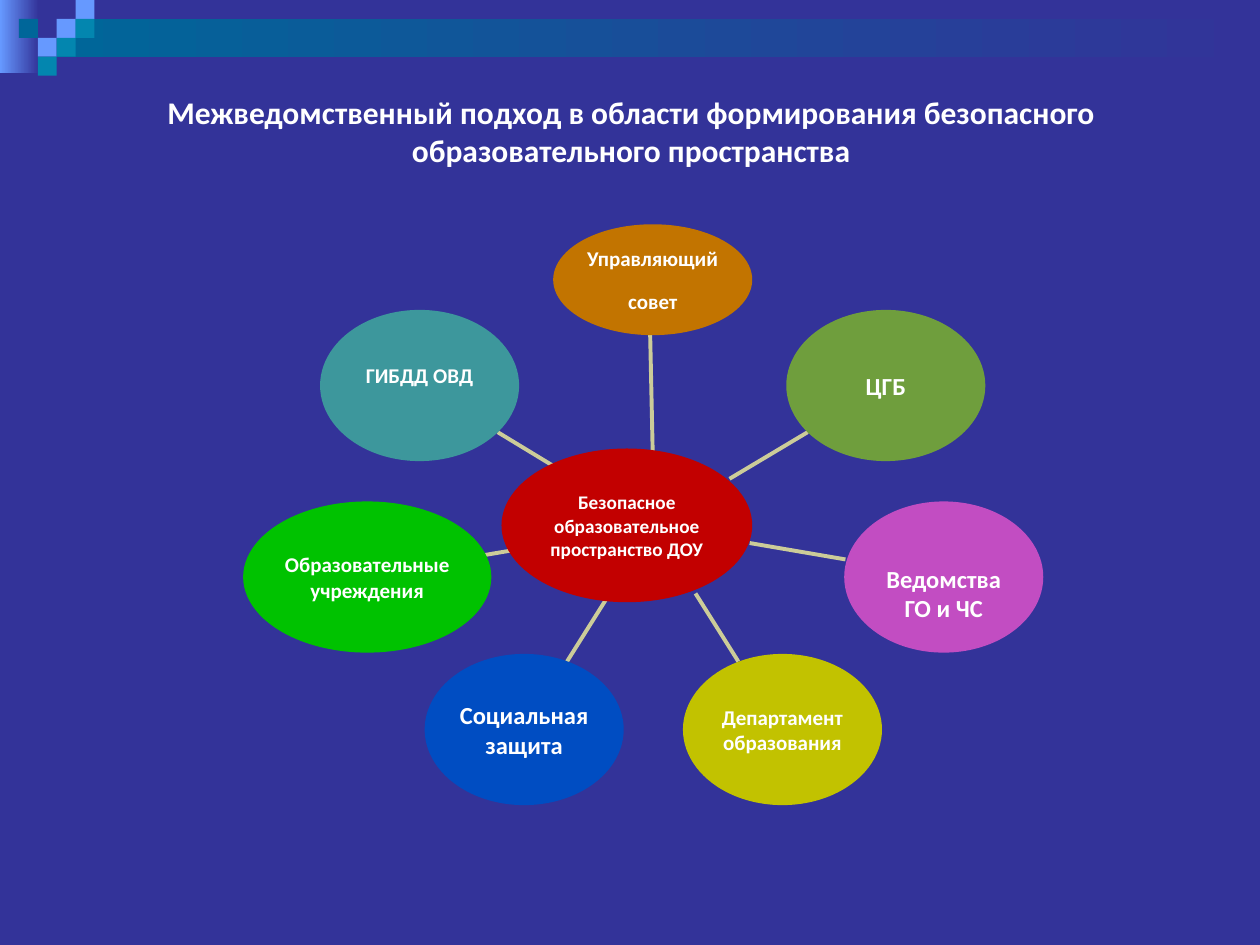
from dataclasses import dataclass
from typing import Any

from lxml import etree
from pptx import Presentation
from pptx import util as u
from pptx.dml.color import RGBColor
from pptx.enum import shapes, text
from pptx.oxml import ns


@dataclass(frozen=True)
class Theme:
    font: str = "Calibri"
    background: str = "333399"
    text: str = "FFFFFF"
    line: str = "CCCC99"
    light: str = "6699FF"
    teal: str = "0386AF"
    deep: str = "006699"
    title_size: int = 18
    large: int = 14
    normal: int = 12
    small: int = 11
    line_width: float = 2.25


@dataclass(frozen=True)
class Box:
    left: float
    top: float
    width: float
    height: float

    def lengths(self) -> list[u.Length]:
        return [u.Inches(n) for n in (self.left, self.top, self.width, self.height)]


@dataclass(frozen=True)
class Node:
    lines: tuple[str, ...]
    box: Box
    colour: str
    size: int
    shift: float = 0
    gap: int = 0


@dataclass(frozen=True)
class Spoke:
    start: tuple[float, float]
    end: tuple[float, float]


THEME = Theme()
WIDTH, HEIGHT = 1.58, 1.2
SQUARE = 0.15

BANDS = (
    (Box(0, 0, 0.31, 0.58), THEME.light),
    (Box(0.45, 0.15, 9.55, 0.3), THEME.deep),
)
SQUARES = (
    (3, 1, THEME.light),
    (4, 0, THEME.light),
    (4, 1, THEME.teal),
    (2, 2, THEME.light),
    (1, 1, THEME.deep),
    (3, 2, THEME.teal),
    (2, 3, THEME.teal),
)
SPOKES = (
    Spoke((4.56, 3.8), (3.95, 3.43)),
    Spoke((4.41, 4.31), (3.64, 4.44)),
    Spoke((4.84, 4.71), (4.5, 5.25)),
    Spoke((5.52, 4.71), (5.86, 5.25)),
    Spoke((5.95, 4.31), (6.71, 4.44)),
    Spoke((5.79, 3.8), (6.41, 3.43)),
    Spoke((5.18, 3.58), (5.16, 2.65)),
)
NODES = (
    Node(("ГИБДД ОВД",), Box(2.54, 2.46, WIDTH, HEIGHT), "3D979C", THEME.normal, -0.08),
    Node(("Образовательные учреждения",), Box(1.93, 3.98, 1.97, HEIGHT), "00C200", THEME.normal),
    Node(("Социальная", "защита"), Box(3.37, 5.19, WIDTH, HEIGHT), "004DC2", THEME.large),
    Node(("Департамент образования",), Box(5.42, 5.19, WIDTH, HEIGHT), "C2C200", THEME.normal),
    Node(("Ведомства", "ГО и ЧС"), Box(6.7, 3.98, WIDTH, HEIGHT), "C24DC2", THEME.large, 0.13),
    Node(("ЦГБ",), Box(6.24, 2.46, WIDTH, HEIGHT), "6F9E3D", THEME.large),
    Node(("Управляющий", "совет"), Box(4.39, 1.78, WIDTH, 0.88), "C27400", THEME.normal, gap=10),
    Node(("Безопасное образовательное пространство ДОУ",), Box(3.98, 3.56, 1.99, 1.22),
         "C20000", THEME.small),
)


def apply(target: Any, values: dict[str, Any]) -> None:
    for name, value in values.items():
        setattr(target, name, value)


def colour(value: str) -> RGBColor:
    return RGBColor.from_string(value)


def add_shape(slide: Any, kind: Any, box: Box, fill: str) -> Any:
    shape = slide.shapes.add_shape(kind, *box.lengths())
    shape.shadow.inherit = False
    shape.fill.solid()
    shape.fill.fore_color.rgb = colour(fill)
    shape.line.fill.background()
    return shape


def add_band(slide: Any, box: Box, start: str) -> None:
    shape = add_shape(slide, shapes.MSO_SHAPE.RECTANGLE, box, start)
    shape.fill.gradient()
    shape.fill.gradient_angle = 0
    for stop, value in zip(shape.fill.gradient_stops, (start, THEME.background)):
        stop.color.rgb = colour(value)


def write(shape: Any, lines: tuple[str, ...], size: int, shift: float = 0, gap: int = 0) -> None:
    frame = shape.text_frame
    apply(frame, {
        "word_wrap": True,
        "vertical_anchor": text.MSO_ANCHOR.MIDDLE,
        "margin_left": 0,
        "margin_right": 0,
        "margin_top": u.Inches(max(2 * shift, 0)),
        "margin_bottom": u.Inches(max(-2 * shift, 0)),
    })
    for index, line in enumerate(lines):
        paragraph = frame.add_paragraph() if index else frame.paragraphs[0]
        paragraph.alignment = text.PP_ALIGN.CENTER
        if index:
            paragraph.space_before = u.Pt(gap)
        run = paragraph.add_run()
        run.text = line
        apply(run.font, {"name": THEME.font, "size": u.Pt(size), "bold": True})
        run.font.color.rgb = colour(THEME.text)


def add_spoke(slide: Any, spoke: Spoke) -> None:
    points = [u.Inches(n) for n in (*spoke.start, *spoke.end)]
    connector = slide.shapes.add_connector(shapes.MSO_CONNECTOR.STRAIGHT, *points)
    connector.line.color.rgb = colour(THEME.line)
    connector.line.width = u.Pt(THEME.line_width)
    etree.SubElement(connector.element.spPr, ns.qn("a:effectLst"))


def add_node(slide: Any, node: Node) -> None:
    shape = add_shape(slide, shapes.MSO_SHAPE.OVAL, node.box, node.colour)
    write(shape, node.lines, node.size, node.shift, node.gap)


def main() -> None:
    presentation = Presentation()
    apply(presentation, {"slide_width": u.Inches(10), "slide_height": u.Inches(7.5)})
    slide = presentation.slides.add_slide(presentation.slide_layouts[6])
    slide.background.fill.solid()
    slide.background.fill.fore_color.rgb = colour(THEME.background)

    for box, start in BANDS:
        add_band(slide, box, start)
    for column, row, fill in SQUARES:
        box = Box(column * SQUARE, row * SQUARE, SQUARE, SQUARE)
        add_shape(slide, shapes.MSO_SHAPE.RECTANGLE, box, fill)

    title = slide.shapes.add_textbox(*Box(0.51, 0.29, 9, 1.5).lengths())
    write(title, ("Межведомственный подход в области формирования безопасного "
                  "образовательного пространства",), THEME.title_size)

    for spoke in SPOKES:
        add_spoke(slide, spoke)
    for node in NODES:
        add_node(slide, node)
    presentation.save("out.pptx")


if __name__ == "__main__":
    main()
